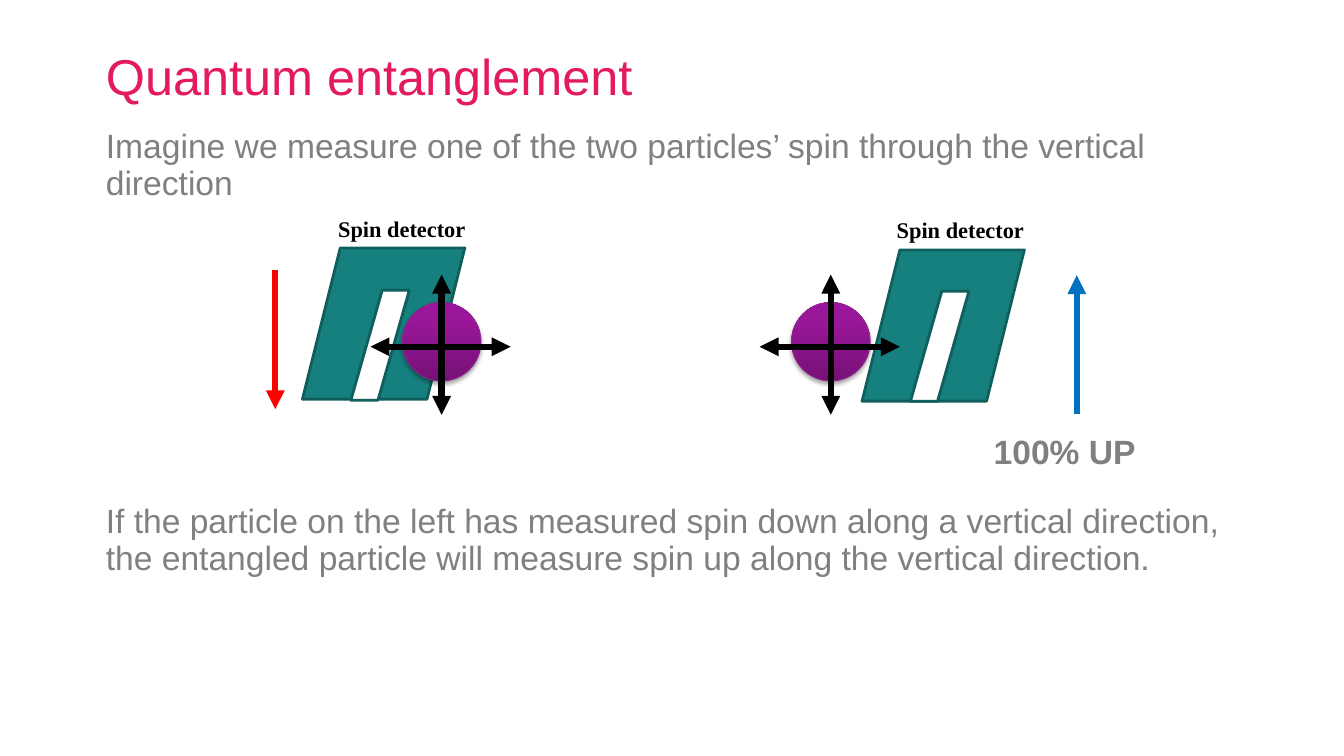
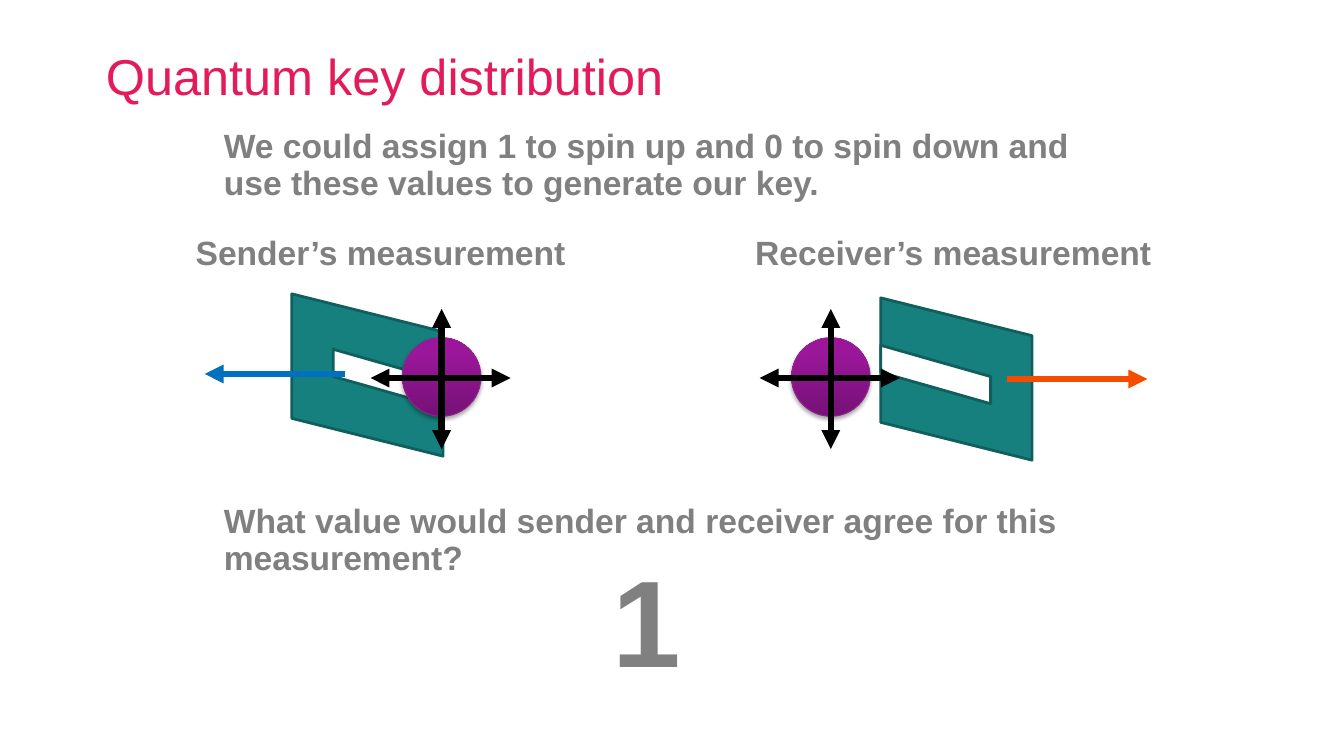
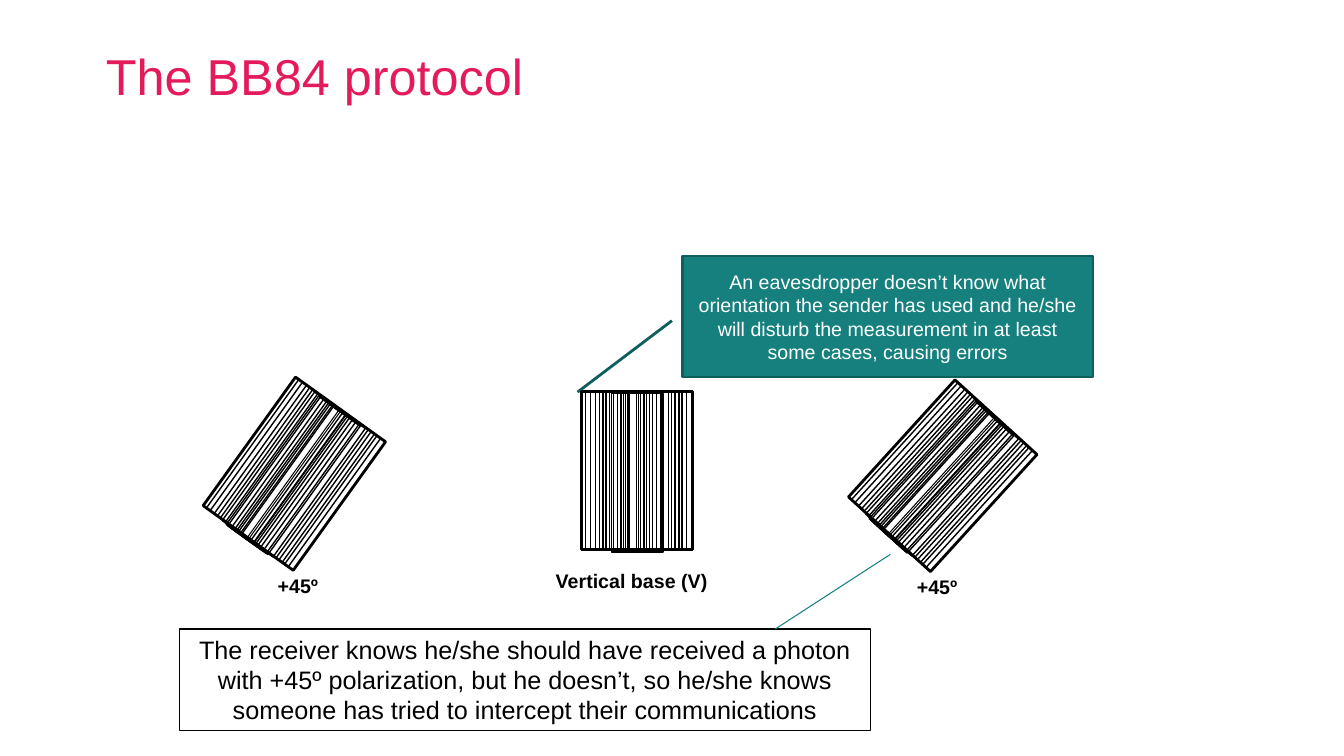
from copy import deepcopy
from dataclasses import dataclass
from math import cos, radians, sin
from typing import Optional

from lxml import etree
from pptx import Presentation
from pptx.dml.color import RGBColor
from pptx.enum.shapes import MSO_CONNECTOR, MSO_SHAPE
from pptx.enum.text import MSO_ANCHOR, MSO_AUTO_SIZE, PP_ALIGN
from pptx.oxml import parse_xml
from pptx.oxml.ns import nsdecls, qn
from pptx.util import Inches, Pt

LEFT, CENTER = PP_ALIGN.LEFT, PP_ALIGN.CENTER
TOP, MIDDLE = MSO_ANCHOR.TOP, MSO_ANCHOR.MIDDLE
NO_FIT = MSO_AUTO_SIZE.NONE
STRAIGHT = MSO_CONNECTOR.STRAIGHT
RECT, OVAL = MSO_SHAPE.RECTANGLE, MSO_SHAPE.OVAL
SLANTED, CALLOUT = MSO_SHAPE.PARALLELOGRAM, MSO_SHAPE.LINE_CALLOUT_1

COLORS = {
    "title": "E41B5B", "body": "808080", "black": "000000", "white": "FFFFFF",
    "teal": "15807D", "teal_edge": "105F5C", "pointer": "12807D",
    "red": "FF0000", "blue": "0070C0", "orange": "F54C00",
    "ball_low": "761176", "ball_mid": "9A179A", "ball_high": "9D149D",
    "ball_edge": "8E248E",
}
BALL_STOPS = ((0, "ball_low"), (0.8, "ball_mid"), (1, "ball_high"))
BALL_SHADOW = (
    f'<a:effectLst {nsdecls("a")}><a:outerShdw blurRad="39370" dist="22860" '
    'dir="5400000" rotWithShape="0"><a:srgbClr val="000000">'
    '<a:alpha val="35000"/></a:srgbClr></a:outerShdw></a:effectLst>'
)
BALL_SIZE, ARROW_LEN = 0.78, 1.39
PLATE_W, PLATE_H, SLOT_W, SLOT_H = 1.61, 1.5, 0.58, 1.09
FILTER_H = 1.57
FILTER_BARS = (
    (1.1, 0, 0), (1, -0.01, 0), (0.91, -0.01, 0), (0.83, 0, 0),
    (0.75, 0, 0), (0.68, 0, 0), (0.62, 0, 0.01), (0.51, 0, 0.02),
    (0.43, 0.02, 0.02), (0.43, -0.02, 0.02), (0.43, -0.06, 0.01),
    (0.28, -0.02, 0.02), (0.23, -0.02, 0), (0.19, -0.02, 0),
    (0.16, -0.01, 0.02), (0.11, -0.02, 0),
)
FILTER_LINES = (-0.01, 0.01)


@dataclass
class Label:
    text: str
    x: float
    y: float
    w: float
    h: float
    size: float = 24
    color: str = "body"
    bold: bool = False
    font: str = "Arial"
    align: int = LEFT
    spacing: Optional[float] = 26
    inset: bool = False
    anchor: int = TOP


@dataclass
class Detector:
    plate: tuple[float, float]
    slot: tuple[float, float]
    rotation: float = 0


@dataclass
class Arrow:
    start: tuple[float, float]
    end: tuple[float, float]
    color: str = "black"
    width: float = 4.5
    head: bool = False
    tail: bool = True


@dataclass
class Filter:
    cx: float
    cy: float
    rotation: float
    label: str
    label_x: float
    label_y: float


def rgb(name: str) -> RGBColor:
    return RGBColor.from_string(COLORS[name])


def write(shape, label: Label) -> None:
    tf = shape.text_frame
    tf.word_wrap = True
    tf.auto_size = NO_FIT
    tf.vertical_anchor = label.anchor
    if not label.inset:
        tf.margin_left = tf.margin_right = tf.margin_top = tf.margin_bottom = 0
    p = tf.paragraphs[0]
    p.alignment = label.align
    p.space_before = Pt(0)
    if label.spacing:
        p.line_spacing = Pt(label.spacing)
    r = p.add_run()
    r.text = label.text
    r.font.name = label.font
    r.font.size = Pt(label.size)
    r.font.bold = label.bold
    r.font.color.rgb = rgb(label.color)


def add_label(slide, label: Label) -> None:
    box = (Inches(v) for v in (label.x, label.y, label.w, label.h))
    write(slide.shapes.add_textbox(*box), label)


def fill_placeholder(ph, label: Label) -> None:
    ph.left, ph.top = Inches(label.x), Inches(label.y)
    ph.width, ph.height = Inches(label.w), Inches(label.h)
    write(ph, label)


def add_body(slide, label: Label) -> None:
    ph = slide.placeholders[1]
    fill_placeholder(ph, label)
    pPr = ph.text_frame.paragraphs[0]._p.get_or_add_pPr()
    pPr.set("marL", "0")
    pPr.set("indent", "0")
    etree.SubElement(pPr, qn("a:buNone"))


def add_slide(prs, title: str, layout: int = 1):
    slide = prs.slides.add_slide(prs.slide_layouts[layout])
    fill_placeholder(slide.shapes.title, Label(
        title, 1.05, 0.44, 11.43, 1.01, size=36, color="title", spacing=44))
    return slide


def add_shape(slide, kind: int, x: float, y: float, w: float, h: float,
              fill: Optional[str], line: str, width: float, rotation: float = 0):
    sp = slide.shapes.add_shape(kind, Inches(x), Inches(y), Inches(w), Inches(h))
    sp.rotation = rotation
    sp.shadow.inherit = False
    if fill:
        sp.fill.solid()
        sp.fill.fore_color.rgb = rgb(fill)
    else:
        sp.fill.background()
    sp.line.color.rgb = rgb(line)
    sp.line.width = Pt(width)
    return sp


def add_arrow(slide, arrow: Arrow) -> None:
    points = (Inches(v) for v in (*arrow.start, *arrow.end))
    cn = slide.shapes.add_connector(STRAIGHT, *points)
    cn.line.color.rgb = rgb(arrow.color)
    cn.line.width = Pt(arrow.width)
    ln = cn.line._get_or_add_ln()
    for tag, wanted in (("a:headEnd", arrow.head), ("a:tailEnd", arrow.tail)):
        if wanted:
            etree.SubElement(ln, qn(tag), type="triangle")
    etree.SubElement(cn._element.spPr, qn("a:effectLst"))


def add_detector(slide, det: Detector) -> None:
    add_shape(slide, SLANTED, *det.plate, PLATE_W, PLATE_H,
              "teal", "teal_edge", 2, det.rotation)
    slot = add_shape(slide, SLANTED, *det.slot, SLOT_W, SLOT_H,
                     "white", "teal_edge", 2, det.rotation)
    slot.adjustments[0] = 0.536


def add_particle(slide, cx: float, ball_y: float, up_y: float, side_y: float) -> None:
    ball = add_shape(slide, OVAL, cx - BALL_SIZE / 2, ball_y - BALL_SIZE / 2,
                     BALL_SIZE, BALL_SIZE, None, "ball_edge", 0.75)
    spPr = ball._element.spPr
    ball.fill.gradient()
    ball.fill.gradient_angle = 90
    stops = spPr.find(qn("a:gradFill")).find(qn("a:gsLst"))
    stops.insert(1, deepcopy(stops[0]))
    for stop, (position, color) in zip(ball.fill.gradient_stops, BALL_STOPS):
        stop.position = position
        stop.color.rgb = rgb(color)
    spPr.replace(spPr.find(qn("a:effectLst")), parse_xml(BALL_SHADOW))
    half = ARROW_LEN / 2
    add_arrow(slide, Arrow((cx, up_y - half), (cx, up_y + half), head=True))
    side_x = cx - 0.01
    add_arrow(slide, Arrow((side_x - half, side_y), (side_x + half, side_y), head=True))


def add_filter(slide, flt: Filter) -> None:
    angle = radians(flt.rotation)

    def turn(dx: float, dy: float) -> tuple[float, float]:
        return (flt.cx + dx * cos(angle) - dy * sin(angle),
                flt.cy + dx * sin(angle) + dy * cos(angle))

    for i, (w, dx, dy) in enumerate(FILTER_BARS):
        x, y = turn(dx, dy)
        add_shape(slide, RECT, x - w / 2, y - FILTER_H / 2, w, FILTER_H,
                  None, "black", 1 if i else 2, flt.rotation)
    for dx in FILTER_LINES:
        add_arrow(slide, Arrow(turn(dx, -FILTER_H / 2), turn(dx, FILTER_H / 2),
                               width=0.75, tail=False))
    add_label(slide, Label(flt.label, flt.label_x, flt.label_y, 1.87, 0.34, size=14,
                           color="black", bold=True, align=CENTER, spacing=None,
                           inset=True))


def add_experiment(slide, detectors: tuple[Detector, ...], ball_y: float,
                   up_y: float, side_y: float, arrows: tuple[Arrow, ...]) -> None:
    for det in detectors:
        add_detector(slide, det)
    for cx in (4.38, 8.24):
        add_particle(slide, cx, ball_y, up_y, side_y)
    for arrow in arrows:
        add_arrow(slide, arrow)


def build_entanglement(prs) -> None:
    slide = add_slide(prs, "Quantum entanglement")
    add_body(slide, Label(
        "Imagine we measure one of the two particles’ spin through the vertical direction",
        1.05, 1.28, 11.37, 2.44))
    add_experiment(
        slide,
        (Detector((8.55, 2.48), (9.03, 2.89)), Detector((3, 2.46), (3.48, 2.88))),
        3.39, 3.42, 3.44,
        (Arrow((2.73, 2.68), (2.73, 4.06), "red"),
         Arrow((10.68, 4.11), (10.68, 2.73), "blue")))
    for x, y in ((8.74, 2.1), (3.2, 2.09)):
        add_label(slide, Label("Spin detector", x, y, 1.57, 0.37, size=16,
                               color="black", bold=True, font="Times New Roman",
                               align=CENTER, spacing=None, inset=True))
    add_label(slide, Label("100% UP", 9.36, 4.31, 2.4, 0.6, bold=True, align=CENTER))
    add_label(slide, Label(
        "If the particle on the left has measured spin down along a vertical direction, "
        "the entangled particle will measure spin up along the vertical direction.",
        1.05, 5, 11.37, 1.57))


def build_key_distribution(prs) -> None:
    slide = add_slide(prs, "Quantum key distribution")
    add_body(slide, Label("Sender’s measurement", 1.94, 2.34, 3.74, 0.59, bold=True))
    add_experiment(
        slide,
        (Detector((8.68, 3.01), (8.99, 3.17), 90),
         Detector((2.84, 2.97), (3.56, 3.21), 270)),
        3.74, 3.76, 3.75,
        (Arrow((3.42, 3.71), (2.03, 3.71), "blue"),
         Arrow((9.99, 3.76), (11.38, 3.76), "orange")))
    for label in (
        Label("Receiver’s measurement", 7.49, 2.34, 3.98, 0.59, bold=True),
        Label("We could assign 1 to spin up and 0 to spin down and use these values "
              "to generate our key.", 2.22, 1.28, 8.81, 2.44, bold=True),
        Label("What value would sender and receiver agree for this measurement?",
              2.22, 5, 8.94, 1.57, bold=True),
        Label("1", 6.07, 6.51, 1.09, 1.02, size=88, bold=True),
    ):
        add_label(slide, label)


def build_protocol(prs) -> None:
    slide = add_slide(prs, "The BB84 protocol", layout=5)
    notes = (
        (RECT, None, "black", 0.75, Label(
            "The receiver knows he/she should have received a photon with +45º "
            "polarization, but he doesn’t, so he/she knows someone has tried to "
            "intercept their communications", 1.78, 6.24, 6.85, 1.01, size=18,
            color="black", align=CENTER, spacing=None, inset=True)),
        (CALLOUT, "teal", "teal_edge", 2, Label(
            "An eavesdropper doesn’t know what orientation the sender has used and "
            "he/she will disturb the measurement in at least some cases, causing errors",
            6.77, 2.54, 4.07, 1.2, size=14, color="white", align=CENTER,
            spacing=None, inset=True, anchor=MIDDLE)),
    )
    for kind, fill, line, width, label in notes:
        sp = add_shape(slide, kind, label.x, label.y, label.w, label.h,
                       fill, line, width)
        write(sp, label)
        if kind == CALLOUT:
            for i, value in enumerate((0.535, -0.026, 1.125, -0.256)):
                sp.adjustments[i] = value
    add_arrow(slide, Arrow((7.69, 6.24), (8.83, 5.5), "pointer", 0.75, tail=False))
    for flt in (
        Filter(2.92, 4.7, 35.7, "+45º", 2.02, 5.64),
        Filter(9.35, 4.72, 42.3, "+45º", 8.36, 5.65),
        Filter(6.32, 4.67, 0, "Vertical base (V)", 5.33, 5.59),
    ):
        add_filter(slide, flt)


def main() -> None:
    prs = Presentation()
    prs.slide_width, prs.slide_height = Inches(13.33), Inches(7.5)
    build_entanglement(prs)
    build_key_distribution(prs)
    build_protocol(prs)
    prs.save("out.pptx")


if __name__ == "__main__":
    main()
